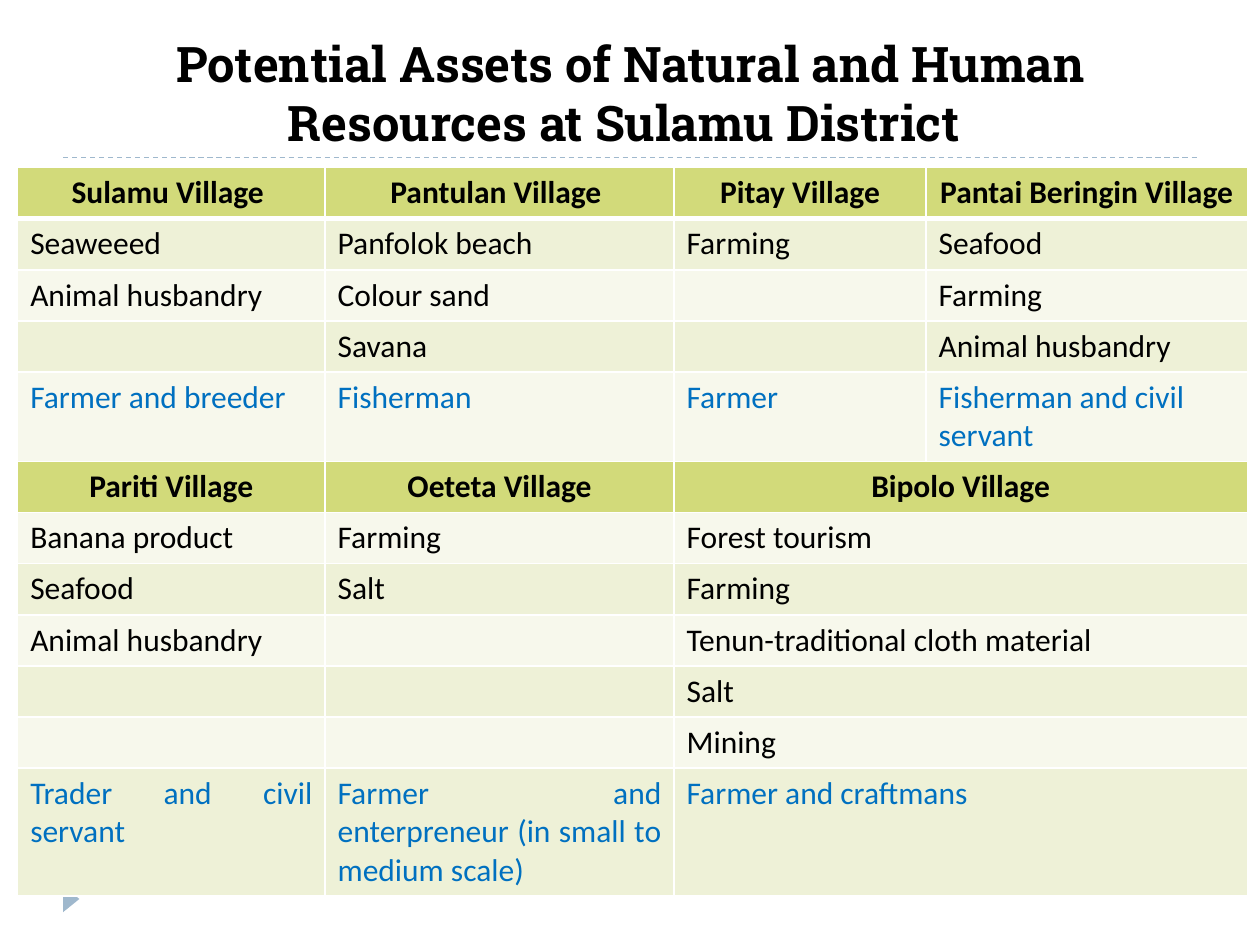
from lxml import etree
from pptx import Presentation
from pptx.dml.color import RGBColor
from pptx.enum.dml import MSO_LINE
from pptx.enum.shapes import MSO_CONNECTOR, MSO_SHAPE
from pptx.enum.text import MSO_ANCHOR, PP_ALIGN
from pptx.oxml.ns import qn
from pptx.util import Inches, Pt

LEFT, CENTER, JUSTIFY = PP_ALIGN.LEFT, PP_ALIGN.CENTER, PP_ALIGN.JUSTIFY
TRIANGLE, STRAIGHT = MSO_SHAPE.ISOSCELES_TRIANGLE, MSO_CONNECTOR.STRAIGHT
DASH, BOTTOM = MSO_LINE.DASH, MSO_ANCHOR.BOTTOM

BLACK, WHITE, BLUE, ACCENT = "000000", "FFFFFF", "0070C0", "9FB8CD"
HEAD_FILL, BANDS = "D2DA7A", ("F7F8EC", "EEF1D7")
SLIDE_W, SLIDE_H = 10, 7.5
MARGIN = 0.05 * SLIDE_W
COLUMNS = (2.44, 2.77, 2, 2.55)
ROW_H = 0.4

# Each group: village names, their assets, then the people's occupations
UPPER = [
    ("Sulamu Village ", "Pantulan Village ", "Pitay Village", "Pantai Beringin Village "),
    ("Seaweeed", "Panfolok beach", "Farming", "Seafood"),
    ("Animal husbandry", "Colour sand", "", "Farming"),
    ("", "Savana", "", "Animal husbandry"),
    ("Farmer and breeder", "Fisherman", "Farmer", "Fisherman and civil servant"),
]
LOWER = [
    ("Pariti Village", "Oeteta Village", "Bipolo Village"),
    ("Banana product ", "Farming ", "Forest tourism"),
    ("Seafood ", "Salt ", "Farming "),
    ("Animal husbandry", "", "Tenun-traditional cloth material"),
    ("", "", "Salt "),
    ("", "", "Mining "),
    ("Trader and civil servant", "Farmer and enterpreneur (in small to medium scale)",
     "Farmer and craftmans"),
]


def rgb(value):
    return RGBColor.from_string(value)


def write(tf, text, font="Calibri", size=18, color=BLACK, bold=False, align=LEFT):
    p = tf.paragraphs[0]
    p.alignment = align
    if text:
        r = p.add_run()
        r.text = text
        r.font.name, r.font.size, r.font.bold = font, Pt(size), bold
        r.font.color.rgb = rgb(color)


def add_rule(s, y):
    """Draw a dashed line across the slide between the margins."""
    line = s.shapes.add_connector(
        STRAIGHT, Inches(MARGIN), Inches(y), Inches(SLIDE_W - MARGIN), Inches(y))
    line.line.color.rgb = rgb(ACCENT)
    line.line.width = Pt(0.75)
    line.line.dash_style = DASH
    etree.SubElement(line._element.spPr, qn("a:effectLst"))


def add_marker(s):
    sp = s.shapes.add_shape(TRIANGLE, Inches(0.46), Inches(7.07), Inches(0.21), Inches(0.13))
    sp.rotation = 90
    sp.shadow.inherit = False
    sp.fill.solid()
    sp.fill.fore_color.rgb = rgb(ACCENT)
    sp.line.fill.background()


def set_borders(cell, top=1, bottom=1):
    """Give a cell white borders; widths are in points."""
    tcPr = cell._tc.get_or_add_tcPr()
    widths = {"a:lnL": 1, "a:lnR": 1, "a:lnT": top, "a:lnB": bottom}
    for i, (tag, width) in enumerate(widths.items()):
        ln = etree.Element(qn(tag), w=str(Pt(width)))
        fill = etree.SubElement(ln, qn("a:solidFill"))
        etree.SubElement(fill, qn("a:srgbClr"), val=WHITE)
        tcPr.insert(i, ln)


def fill_group(table, first_row, group, body_align):
    for i, texts in enumerate(group):
        row = first_row + i
        is_head, is_people = i == 0, i == len(group) - 1
        if len(texts) < len(COLUMNS):
            table.cell(row, len(texts) - 1).merge(table.cell(row, len(COLUMNS) - 1))
        for col in range(len(COLUMNS)):
            cell = table.cell(row, col)
            cell.fill.solid()
            cell.fill.fore_color.rgb = rgb(HEAD_FILL if is_head else BANDS[row % 2])
            set_borders(cell, top=3 if row == 1 else 1, bottom=3 if row == 0 else 1)
            if col < len(texts):
                write(cell.text_frame, texts[col], bold=is_head,
                      color=BLUE if is_people else BLACK,
                      align=CENTER if is_head else body_align)


def add_village_table(s):
    rows = len(UPPER) + len(LOWER)
    table = s.shapes.add_table(
        rows, len(COLUMNS), Inches(0.14), Inches(1.33),
        Inches(sum(COLUMNS)), Inches(rows * ROW_H)).table
    for column, width in zip(table.columns, COLUMNS):
        column.width = Inches(width)
    fill_group(table, 0, UPPER, LEFT)
    fill_group(table, len(UPPER), LOWER, JUSTIFY)


def add_title(s, text):
    title = s.shapes.title
    title.left, title.top = Inches(MARGIN), Inches(0.17)
    title.width, title.height = Inches(SLIDE_W - 2 * MARGIN), Inches(1.08)
    title.text_frame.vertical_anchor = BOTTOM
    write(title.text_frame, text, font="Roboto Slab", size=28, bold=True, align=CENTER)


def main():
    prs = Presentation()
    prs.slide_width, prs.slide_height = Inches(SLIDE_W), Inches(SLIDE_H)
    s = prs.slides.add_slide(prs.slide_layouts[5])
    add_title(s, "Potential Assets of Natural and Human Resources at Sulamu District ")
    for y in (6.95, 1.25):
        add_rule(s, y)
    add_marker(s)
    add_village_table(s)
    prs.save("out.pptx")


if __name__ == "__main__":
    main()
